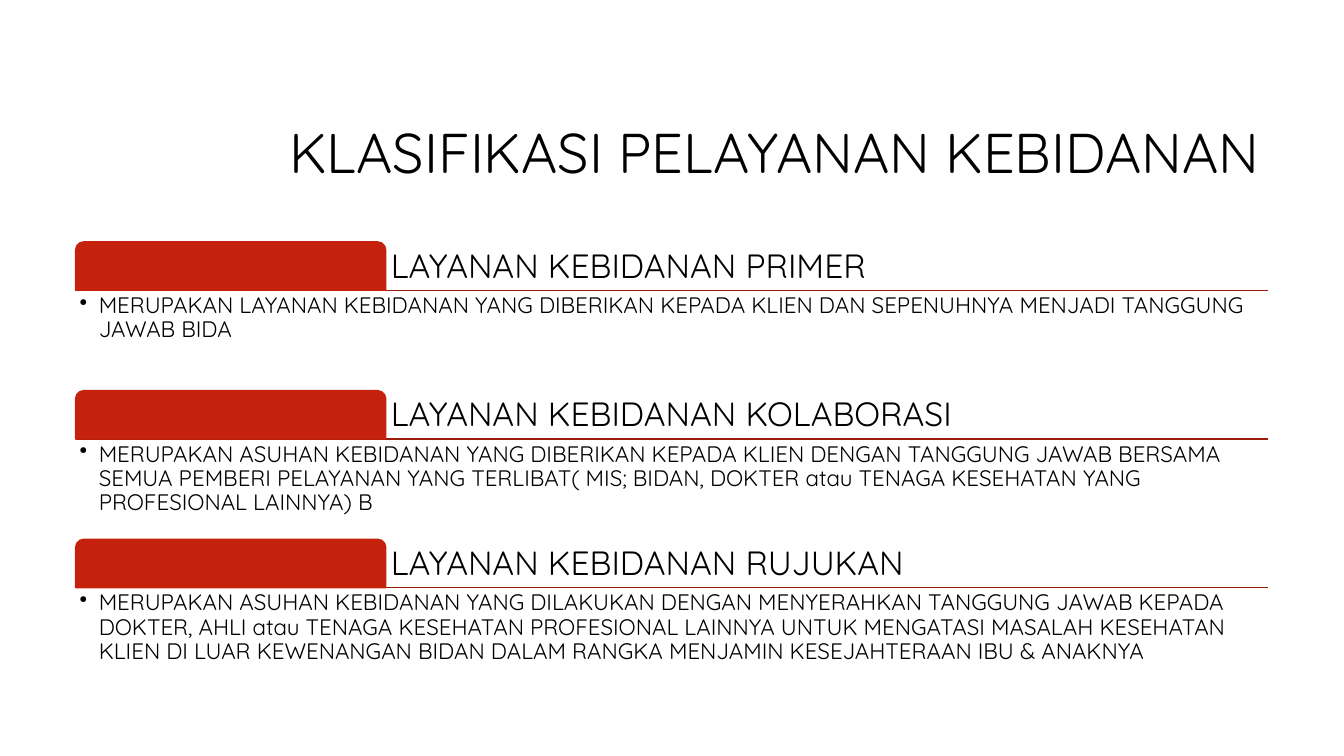
from lxml.etree import SubElement
from pptx import Presentation
from pptx.dml.color import RGBColor
from pptx.enum.shapes import MSO_CONNECTOR, MSO_SHAPE
from pptx.enum.text import MSO_ANCHOR, MSO_AUTO_SIZE, PP_ALIGN
from pptx.oxml.ns import qn
from pptx.util import Inches, Pt

FONT = "Quicksand"
BLACK = RGBColor(0x00, 0x00, 0x00)
RED = RGBColor(0xC4, 0x22, 0x0D)
DARK = RGBColor(0x9D, 0x1B, 0x0A)

ITEMS = [
    ("LAYANAN KEBIDANAN PRIMER",
     "MERUPAKAN LAYANAN KEBIDANAN YANG DIBERIKAN KEPADA KLIEN DAN SEPENUHNYA "
     "MENJADI TANGGUNG JAWAB BIDA"),
    ("LAYANAN KEBIDANAN KOLABORASI",
     "MERUPAKAN ASUHAN KEBIDANAN YANG DIBERIKAN KEPADA KLIEN DENGAN TANGGUNG "
     "JAWAB BERSAMA SEMUA PEMBERI PELAYANAN YANG TERLIBAT( MIS; BIDAN, DOKTER "
     "atau TENAGA KESEHATAN YANG PROFESIONAL LAINNYA) B"),
    ("LAYANAN KEBIDANAN RUJUKAN",
     "MERUPAKAN ASUHAN KEBIDANAN YANG DILAKUKAN DENGAN MENYERAHKAN TANGGUNG "
     "JAWAB KEPADA DOKTER, AHLI atau TENAGA KESEHATAN PROFESIONAL LAINNYA UNTUK "
     "MENGATASI MASALAH KESEHATAN KLIEN DI LUAR KEWENANGAN BIDAN DALAM RANGKA "
     "MENJAMIN KESEJAHTERAAN IBU & ANAKNYA"),
]


def style(frame, size, anchor):
    """Format a frame that holds one paragraph."""
    frame.word_wrap = True
    frame.auto_size = MSO_AUTO_SIZE.NONE
    frame.vertical_anchor = anchor
    par = frame.paragraphs[0]
    par.line_spacing = 0.9
    for run in par.runs:
        run.font.name = FONT
        run.font.size = Pt(size)
        run.font.color.rgb = BLACK
    return par


def add_title(slide, left, top, width, height):
    title = slide.shapes.title
    title.left, title.top = Inches(left), Inches(top)
    title.width, title.height = Inches(width), Inches(height)
    title.text_frame.text = "KLASIFIKASI PELAYANAN KEBIDANAN"
    par = style(title.text_frame, 40, MSO_ANCHOR.MIDDLE)
    par.alignment = PP_ALIGN.RIGHT


def add_text(slide, text, inset, left, top, width, height):
    box = slide.shapes.add_textbox(
        Inches(left), Inches(top), Inches(width), Inches(height))
    frame = box.text_frame
    frame.margin_left = frame.margin_right = Inches(inset)
    frame.margin_top = frame.margin_bottom = Inches(inset)
    frame.text = text
    return frame


def add_bullet(par):
    par.level = 1
    props = par._p.get_or_add_pPr()
    props.set("marL", str(Inches(0.19)))
    props.set("indent", str(-Inches(0.19)))
    SubElement(props, qn("a:buChar")).set("char", "•")


def add_item(slide, head, body, left, top, width, height):
    band = 0.48
    tab_w = width * 0.26
    base = top + band

    # Rule under the heading
    rule = slide.shapes.add_connector(
        MSO_CONNECTOR.STRAIGHT, Inches(left), Inches(base),
        Inches(left + width), Inches(base))
    rule.line.color.rgb = DARK
    rule.line.width = Pt(1)
    SubElement(rule._element.spPr, qn("a:effectLst"))

    # Heading
    frame = add_text(slide, head, 0.05,
                     left + tab_w, top, width - tab_w, band)
    style(frame, 24, MSO_ANCHOR.BOTTOM)

    # Red tab
    tab = slide.shapes.add_shape(
        MSO_SHAPE.ROUND_2_SAME_RECTANGLE, Inches(left), Inches(top),
        Inches(tab_w), Inches(band))
    tab.adjustments[0] = 0.167
    tab.adjustments[1] = 0
    tab.shadow.inherit = False
    tab.fill.solid()
    tab.fill.fore_color.rgb = RED
    tab.line.color.rgb = RED
    tab.line.width = Pt(1)

    # Description
    frame = add_text(slide, body, 0.04, left, base, width, height - band)
    add_bullet(frame.paragraphs[0])
    style(frame, 16, MSO_ANCHOR.TOP)


def add_list(slide, left, top, width, height):
    gap = 0.025
    step = (height + gap) / len(ITEMS)
    for row, (head, body) in enumerate(ITEMS):
        add_item(slide, head, body, left, top + row * step, width, step - gap)


def main():
    deck = Presentation()
    deck.slide_width, deck.slide_height = Inches(13.33), Inches(7.5)
    slide = deck.slides.add_slide(deck.slide_layouts.get_by_name("Title Only"))
    add_title(slide, 2.19, 0.84, 10.4, 1.41)
    add_list(slide, 0.75, 2.4, 11.83, 4.4)
    deck.save("out.pptx")


if __name__ == "__main__":
    main()
